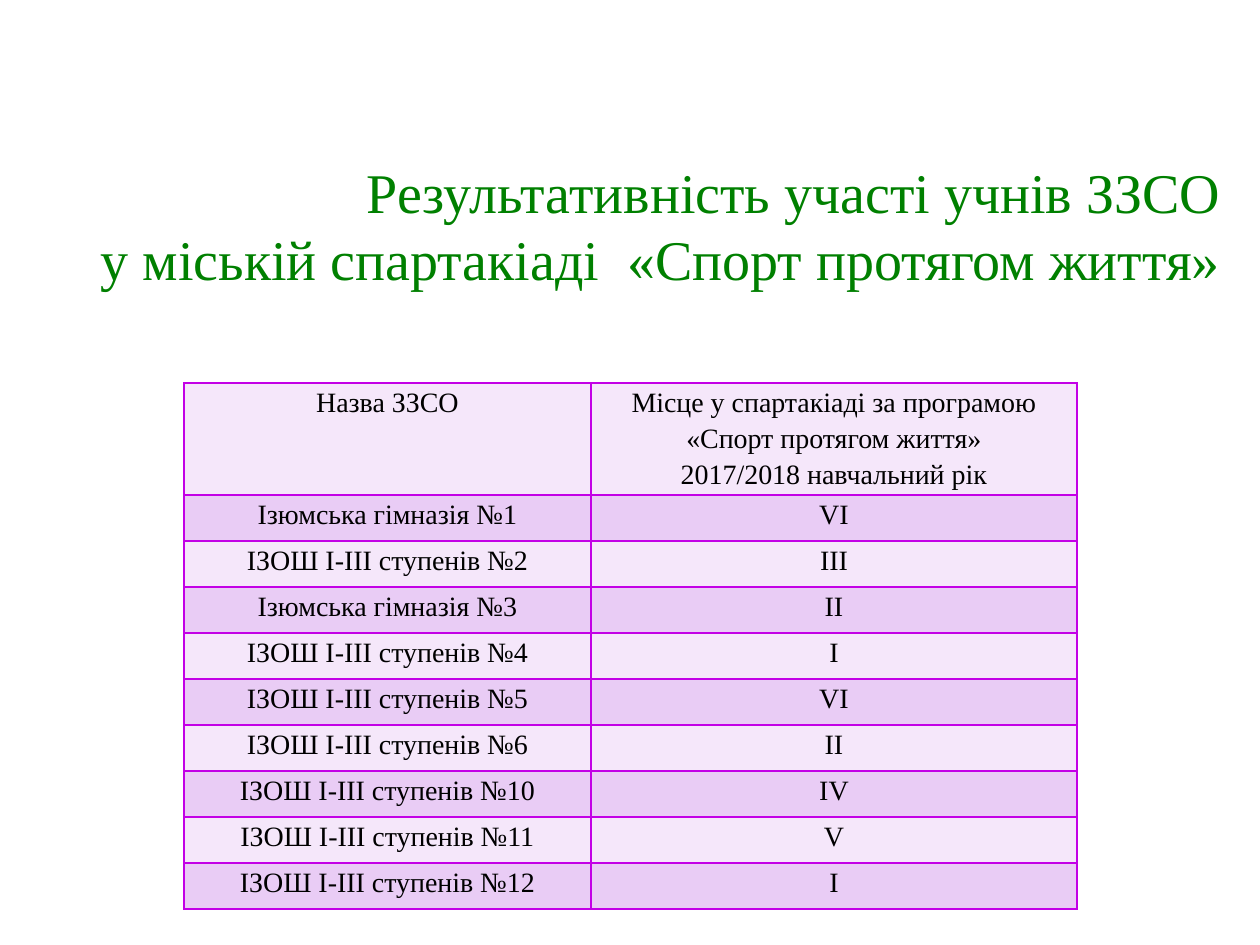
from dataclasses import dataclass

from lxml import etree
from pptx import Presentation
from pptx import util as u
from pptx.dml.color import RGBColor
from pptx.enum import text
from pptx.oxml import ns

SCALE = 914400 / 126  # EMU in one px


def px(n):
    return u.Emu(round(n * SCALE))


@dataclass(frozen=True)
class Theme:
    font: str = "Times New Roman"
    green: str = "008000"
    ink: str = "000000"
    edge: str = "C300E6"
    bands: tuple = ("F5E7FA", "E9CCF5")
    head: int = 32
    body: int = 16
    rule: int = 1
    lead: float = 1.15


class Page:
    """Holds the theme and the slide being filled."""

    def __init__(self, deck, theme):
        self.theme = theme
        self.slide = deck.slides.add_slide(deck.slide_layouts[5])

    def style(self, frame, align, size, color, lead=None):
        for par in frame.paragraphs:
            par.alignment = align
            par.line_spacing = lead
            for run in par.runs:
                run.font.name = self.theme.font
                run.font.size = u.Pt(size)
                run.font.color.rgb = RGBColor.from_string(color)

    def title(self, words, left, top, width, height):
        box = self.slide.shapes.title
        box.left, box.top = px(left), px(top)
        box.width, box.height = px(width), px(height)
        frame = box.text_frame
        frame.text = words
        frame.word_wrap = True
        frame.auto_size = text.MSO_AUTO_SIZE.NONE
        frame.vertical_anchor = text.MSO_ANCHOR.MIDDLE
        self.style(frame, text.PP_ALIGN.RIGHT, self.theme.head, self.theme.green)

    def border(self, cell):
        props = cell._tc.get_or_add_tcPr()
        for tag in ("a:lnL", "a:lnR", "a:lnT", "a:lnB"):
            line = etree.SubElement(props, ns.qn(tag), w=str(u.Pt(self.theme.rule)))
            fill = etree.SubElement(line, ns.qn("a:solidFill"))
            etree.SubElement(fill, ns.qn("a:srgbClr"), val=self.theme.edge)

    def cell(self, cell, words, band):
        cell.text = words
        cell.margin_left = cell.margin_right = px(9)
        cell.margin_top = cell.margin_bottom = 0
        self.border(cell)
        cell.fill.solid()
        cell.fill.fore_color.rgb = RGBColor.from_string(band)
        self.style(cell.text_frame, text.PP_ALIGN.CENTER,
                   self.theme.body, self.theme.ink, self.theme.lead)

    def table(self, rows, left, top, widths, heights):
        grid = self.slide.shapes.add_table(
            len(rows), len(widths), px(left), px(top),
            px(sum(widths)), px(sum(heights))).table
        for col, width in zip(grid.columns, widths):
            col.width = px(width)
        for i, (row, height) in enumerate(zip(rows, heights)):
            grid.rows[i].height = px(height)
            for j, words in enumerate(row):
                self.cell(grid.cell(i, j), words, self.theme.bands[i % 2])


TITLE = ("Результативність участі учнів ЗЗСО\v"
         "у міській спартакіаді  «Спорт протягом життя»")
HEADER = ("Назва ЗЗСО",
          "Місце у спартакіаді за програмою\n"
          "«Спорт протягом життя»\n"
          "2017/2018 навчальний рік")
PLACES = [
    ("Ізюмська гімназія №1", "VI"),
    ("ІЗОШ І-ІІІ ступенів №2", "ІІІ"),
    ("Ізюмська гімназія №3", "ІІ"),
    ("ІЗОШ І-ІІІ ступенів №4", "І"),
    ("ІЗОШ І-ІІІ ступенів №5", "VI"),
    ("ІЗОШ І-ІІІ ступенів №6", "ІІ"),
    ("ІЗОШ І-ІІІ ступенів №10", "IV"),
    ("ІЗОШ І-ІІІ ступенів №11", "V"),
    ("ІЗОШ І-ІІІ ступенів №12", "І"),
]


def main():
    deck = Presentation()
    deck.slide_width, deck.slide_height = px(1260), px(945)
    page = Page(deck, Theme())
    page.title(TITLE, 74, 145, 1160, 159)
    page.table([HEADER, *PLACES], 184, 383, (407, 486),
               [112] + [46] * len(PLACES))
    deck.save("out.pptx")


if __name__ == "__main__":
    main()
